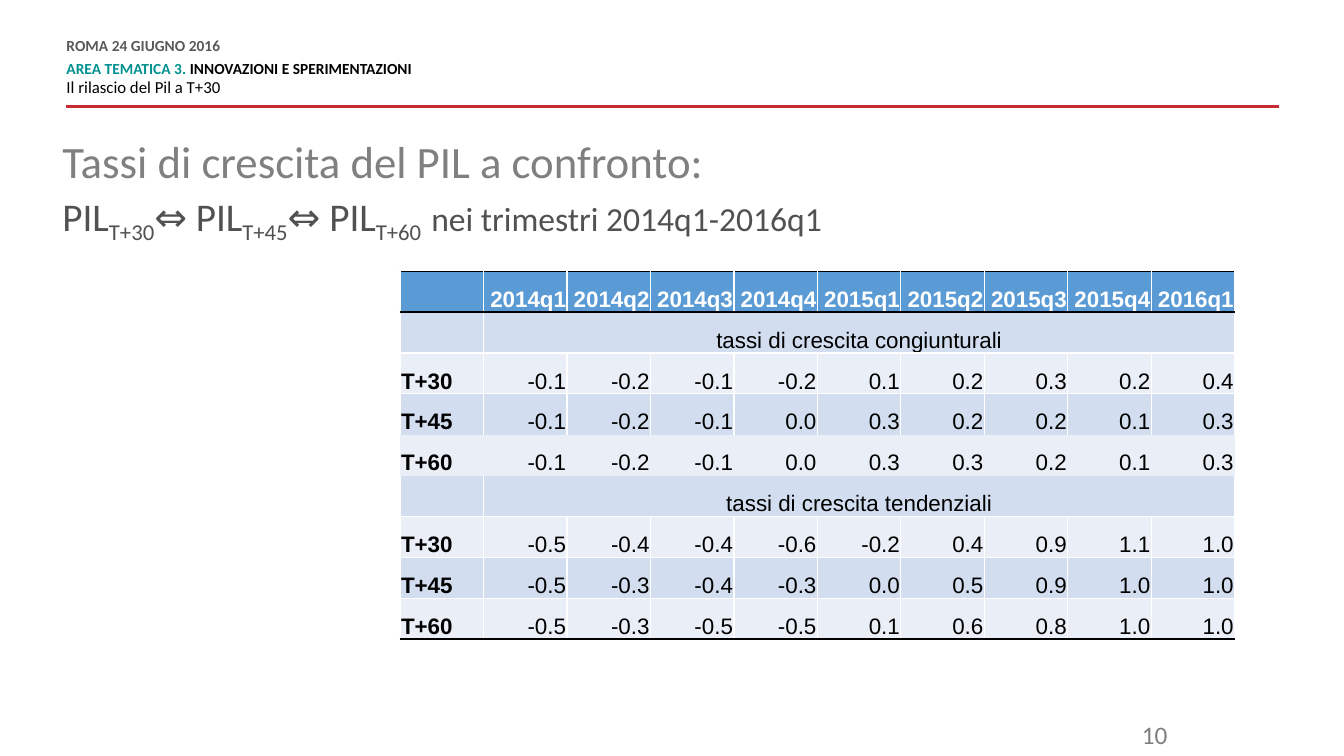
from lxml import etree
from pptx import Presentation
from pptx.dml.color import RGBColor
from pptx.enum.shapes import MSO_CONNECTOR
from pptx.enum.text import MSO_ANCHOR, PP_ALIGN as Align
from pptx.oxml.ns import qn
from pptx.util import Pt

WHITE, BLACK = "FFFFFF", "000000"
HEADER_BLUE, DARK_BAND, LIGHT_BAND = "5B9BD5", "D2DEEF", "EAEFF7"
GREY = "505150"

QUARTERS = ["2014q1", "2014q2", "2014q3", "2014q4", "2015q1",
            "2015q2", "2015q3", "2015q4", "2016q1"]
# Each row: label, values (or one spanning heading), fill, top and bottom line, side lines
GROWTH_ROWS = [
    ("", QUARTERS, HEADER_BLUE, BLACK, BLACK, WHITE),
    ("", "tassi di crescita congiunturali", DARK_BAND, BLACK, WHITE, WHITE),
    ("T+30", "-0.1 -0.2 -0.1 -0.2 0.1 0.2 0.3 0.2 0.4".split(), LIGHT_BAND, WHITE, WHITE, WHITE),
    ("T+45", "-0.1 -0.2 -0.1 0.0 0.3 0.2 0.2 0.1 0.3".split(), DARK_BAND, WHITE, None, WHITE),
    ("T+60", "-0.1 -0.2 -0.1 0.0 0.3 0.3 0.2 0.1 0.3".split(), LIGHT_BAND, None, None, None),
    ("", "tassi di crescita tendenziali", DARK_BAND, None, WHITE, WHITE),
    ("T+30", "-0.5 -0.4 -0.4 -0.6 -0.2 0.4 0.9 1.1 1.0".split(), LIGHT_BAND, WHITE, WHITE, WHITE),
    ("T+45", "-0.5 -0.3 -0.4 -0.3 0.0 0.5 0.9 1.0 1.0".split(), DARK_BAND, WHITE, WHITE, WHITE),
    ("T+60", "-0.5 -0.3 -0.5 -0.5 0.1 0.6 0.8 1.0 1.0".split(), LIGHT_BAND, WHITE, BLACK, WHITE),
]


def rgb(value):
    return RGBColor.from_string(value)


def apply_format(target, values):
    for name, value in values.items():
        setattr(target, name, value)


def add_run(paragraph, text, size, color, bold=False, font="Calibri", subscript=False):
    run = paragraph.add_run()
    run.text = text
    apply_format(run.font, {"name": font, "size": Pt(size), "bold": bold})
    run.font.color.rgb = rgb(color)
    if subscript:
        run._r.get_or_add_rPr().set("baseline", "-25000")


def add_text(slide, left, top, width, height, paragraphs, inset=True):
    """Each paragraph is a dict of paragraph format and a list of run arguments."""
    frame = slide.shapes.add_textbox(Pt(left), Pt(top), Pt(width), Pt(height)).text_frame
    frame.word_wrap = True
    if not inset:
        apply_format(frame, dict.fromkeys(
            ["margin_left", "margin_top", "margin_right", "margin_bottom"], 0))
    for index, (layout, runs) in enumerate(paragraphs):
        paragraph = frame.add_paragraph() if index else frame.paragraphs[0]
        apply_format(paragraph, layout)
        for run in runs:
            add_run(paragraph, **run)


def add_rule(slide, left, right, y, color, weight):
    rule = slide.shapes.add_connector(MSO_CONNECTOR.STRAIGHT, Pt(left), Pt(y), Pt(right), Pt(y))
    rule.line.color.rgb = rgb(color)
    rule.line.width = Pt(weight)
    etree.SubElement(rule._element.spPr, qn("a:effectLst"))


def set_borders(cell, sides, top, bottom):
    """A colour of None switches that line off."""
    properties = cell._tc.get_or_add_tcPr()
    for tag, color in (("lnL", sides), ("lnR", sides), ("lnT", top), ("lnB", bottom)):
        line = etree.SubElement(properties, qn(f"a:{tag}"), w=str(Pt(1)))
        if color:
            fill = etree.SubElement(line, qn("a:solidFill"))
            etree.SubElement(fill, qn("a:srgbClr"), val=color)
        else:
            etree.SubElement(line, qn("a:noFill"))


def add_growth_table(slide, left, top, column_width, row_height):
    columns = len(QUARTERS) + 1
    table = slide.shapes.add_table(
        len(GROWTH_ROWS), columns, Pt(left), Pt(top),
        Pt(column_width * columns), Pt(row_height * len(GROWTH_ROWS))).table
    for column in table.columns:
        column.width = Pt(column_width)
    for row in table.rows:
        row.height = Pt(row_height)

    cell_format = {"vertical_anchor": MSO_ANCHOR.BOTTOM, "margin_left": Pt(0.72),
                   "margin_top": Pt(0.72), "margin_right": Pt(0.72), "margin_bottom": 0}
    for r, (label, values, fill, above, below, sides) in enumerate(GROWTH_ROWS):
        is_heading = isinstance(values, str)
        texts = [label] + ([values] if is_heading else values)
        for c in range(columns):
            cell = table.cell(r, c)
            apply_format(cell, cell_format)
            set_borders(cell, sides, above, below)
            cell.fill.solid()
            cell.fill.fore_color.rgb = rgb(fill)
            if c < len(texts) and texts[c]:
                paragraph = cell.text_frame.paragraphs[0]
                paragraph.alignment = (Align.LEFT if c == 0 else
                                       Align.CENTER if is_heading else Align.RIGHT)
                add_run(paragraph, texts[c], 16, WHITE if r == 0 else BLACK,
                        bold=r == 0 or c == 0, font="Arial")
        if is_heading:
            table.cell(r, 1).merge(table.cell(r, columns - 1))


def main():
    deck = Presentation()
    apply_format(deck, {"slide_width": Pt(960), "slide_height": Pt(540)})
    slide = deck.slides.add_slide(deck.slide_layouts[6])

    add_rule(slide, 47.5, 913.7, 76.3, "C72A31", 2)

    tight = {"line_spacing": Pt(10.8)}
    add_text(slide, 47.5, 28.1, 600.5, 42.5, [
        (tight | {"space_after": Pt(6)},
         [dict(text="ROMA 24 GIUGNO 2016", size=11, color="595959", bold=True)]),
        (tight,
         [dict(text="AREA TEMATICA 3. ", size=11, color="009190", bold=True),
          dict(text="INNOVAZIONI E SPERIMENTAZIONI", size=11, color=BLACK, bold=True)]),
        (tight | {"space_before": Pt(3), "space_after": Pt(6)},
         [dict(text="Il rilascio del Pil a T+30", size=12, color=BLACK)]),
    ], inset=False)

    releases = []
    for name, delay in (("PIL", "T+30"), ("⇔ PIL", "T+45"), ("⇔ PIL", "T+60")):
        releases += [dict(text=name, size=28, color=GREY),
                     dict(text=delay, size=28, color=GREY, subscript=True)]
    add_text(slide, 44.6, 100.1, 607, 81.4, [
        ({"line_spacing": 0.9},
         [dict(text="Tassi di crescita del PIL a confronto:", size=32, color="808080")]),
        ({"line_spacing": 0.9},
         releases + [dict(text=" ", size=32, color=GREY),
                     dict(text="nei trimestri 2014q1-2016q1", size=24, color=GREY)]),
    ], inset=False)

    add_growth_table(slide, 285.8, 193.7, 59.62, 29.2)
    add_text(slide, 784.1, 510.5, 56.9, 25.2, [
        ({"alignment": Align.RIGHT}, [dict(text="10", size=18, color="7F7F7F")])])

    deck.save("out.pptx")


if __name__ == "__main__":
    main()
